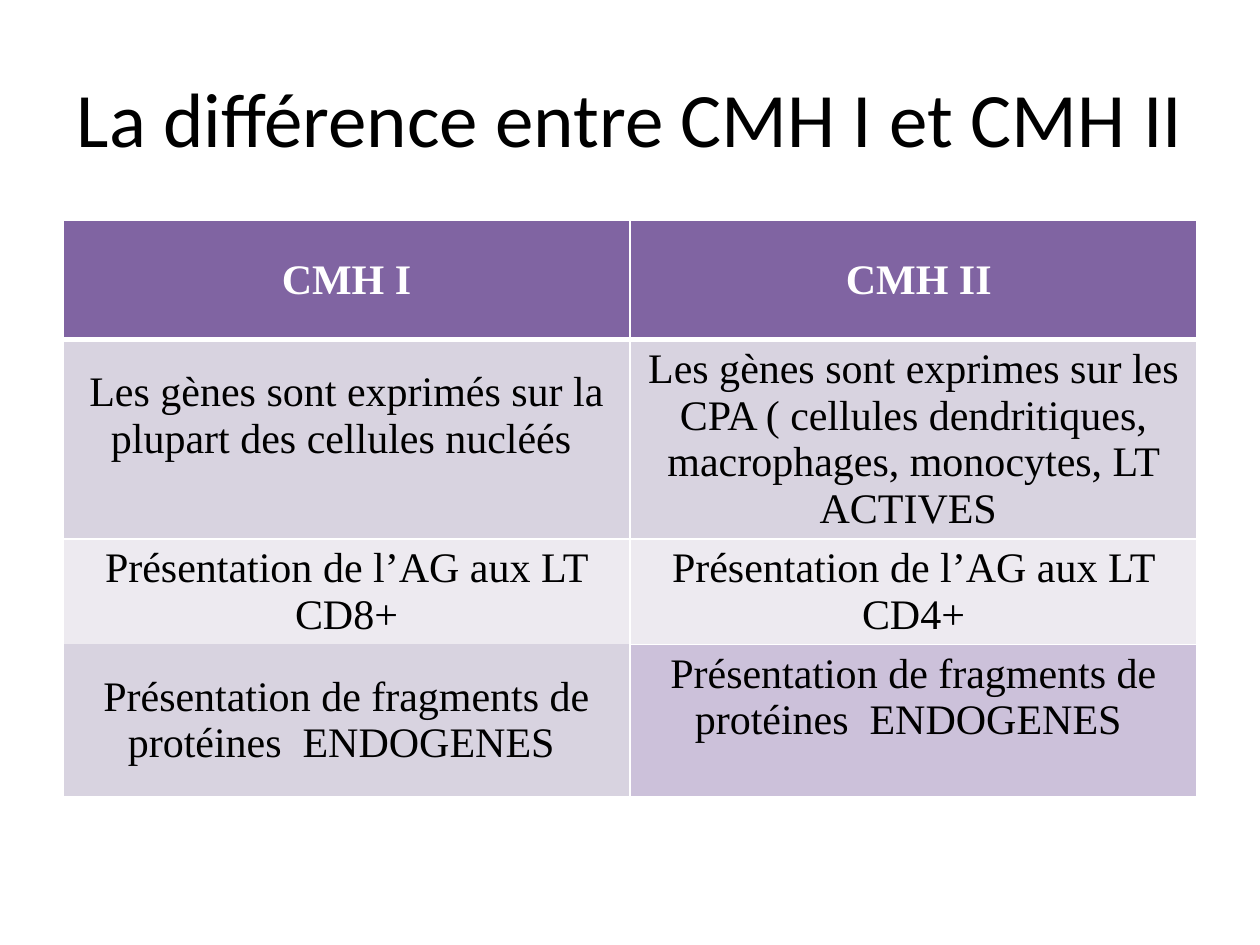
from dataclasses import dataclass

import lxml.etree
import pptx
import pptx.dml.color
import pptx.enum.text
import pptx.oxml.ns
import pptx.util

Pt = pptx.util.Pt
CENTER = pptx.enum.text.PP_ALIGN.CENTER
MIDDLE = pptx.enum.text.MSO_ANCHOR.MIDDLE


@dataclass(frozen=True)
class Theme:
    title_font: str = "Calibri"
    table_font: str = "Times New Roman"
    title_size: float = 44
    table_size: float = 24
    ink: str = "000000"
    white: str = "FFFFFF"
    header: str = "8064A2"
    band_dark: str = "D8D3E0"
    band_light: str = "EDEAF0"
    accent: str = "CCC1DA"
    rule: float = 1
    header_rule: float = 3


THEME = Theme()
MARGIN, WIDTH = 36, 648
LIFT = 30.2  # bottom inset that leaves one text line free below the wording
ROW_HEIGHTS = [68, 114, 60, 0, 86.4]

HEADER = {"fill": THEME.header, "color": THEME.white, "bold": True}
# (row, column, text, format); rows 2-3 and 3-4 are joined in opposite columns
CELLS = [
    (0, 0, "CMH I", HEADER),
    (0, 1, " CMH II", HEADER),
    (1, 0, "Les gènes sont exprimés sur la plupart des cellules nucléés ",
     {"fill": THEME.band_dark, "bottom": LIFT}),
    (1, 1, "Les gènes sont exprimes sur les CPA ( cellules dendritiques, "
           "macrophages, monocytes, LT ACTIVES ", {"fill": THEME.band_dark}),
    (2, 0, "Présentation de l’AG aux LT CD8+", {"fill": THEME.band_light}),
    (2, 1, "Présentation de l’AG aux LT CD4+", {"fill": THEME.band_light}),
    (3, 0, "Présentation de fragments de protéines  ENDOGENES ",
     {"fill": THEME.band_dark}),
    (4, 1, "Présentation de fragments de protéines  ENDOGENES ",
     {"fill": THEME.accent, "bottom": LIFT}),
]
MERGES = [((2, 1), (3, 1)), ((3, 0), (4, 0))]


class SlideBuilder:
    def __init__(self, slide, theme):
        self.slide = slide
        self.theme = theme

    def set_text(self, frame, text, color, **font_format):
        frame.word_wrap = True
        paragraph = frame.paragraphs[0]
        paragraph.alignment = CENTER
        run = paragraph.add_run()
        run.text = text
        for attribute, value in font_format.items():
            setattr(run.font, attribute, value)
        run.font.color.rgb = pptx.dml.color.RGBColor.from_string(color)

    def title(self, text, left, top, width, height):
        heading = self.slide.shapes.title
        place = {"left": left, "top": top, "width": width, "height": height}
        for attribute, value in place.items():
            setattr(heading, attribute, Pt(value))
        heading.text_frame.vertical_anchor = MIDDLE
        self.set_text(heading.text_frame, text, self.theme.ink,
                      name=self.theme.title_font, size=Pt(self.theme.title_size))

    def borders(self, cell, bottom, top):
        """Draw the white rules; they must precede the fill in the cell's XML."""
        qn = pptx.oxml.ns.qn
        properties = cell._tc.get_or_add_tcPr()
        rule = self.theme.rule
        for side, weight in {"L": rule, "R": rule, "T": top, "B": bottom}.items():
            line = lxml.etree.SubElement(properties, qn(f"a:ln{side}"), w=str(Pt(weight)))
            fill = lxml.etree.SubElement(line, qn("a:solidFill"))
            lxml.etree.SubElement(fill, qn("a:srgbClr"), val=self.theme.white)

    def cell(self, cell, text, fill, color=None, bold=False, bottom=3.6):
        cell.fill.solid()
        cell.fill.fore_color.rgb = pptx.dml.color.RGBColor.from_string(fill)
        cell.vertical_anchor = MIDDLE
        cell.margin_bottom = Pt(bottom)
        self.set_text(cell.text_frame, text, color or self.theme.ink, bold=bold,
                      name=self.theme.table_font, size=Pt(self.theme.table_size))

    def table(self, cells, merges, row_heights, left, top, width):
        frame = self.slide.shapes.add_table(
            len(row_heights), 2, Pt(left), Pt(top), Pt(width), Pt(sum(row_heights)))
        grid = frame.table
        for row, height in zip(grid.rows, row_heights):
            row.height = Pt(height)
        thin, thick = self.theme.rule, self.theme.header_rule
        for index, row in enumerate(grid.rows):
            for cell in row.cells:
                self.borders(cell, bottom=thick if index == 0 else thin,
                             top=thick if index == 1 else thin)
        for first, last in merges:
            grid.cell(*first).merge(grid.cell(*last))
        for row, column, text, cell_format in cells:
            self.cell(grid.cell(row, column), text, **cell_format)


def main():
    deck = pptx.Presentation()
    deck.slide_width, deck.slide_height = Pt(720), Pt(540)
    builder = SlideBuilder(deck.slides.add_slide(deck.slide_layouts[5]), THEME)
    builder.title("La différence entre CMH I et CMH II", MARGIN, 21.6, WIDTH, 90)
    builder.table(CELLS, MERGES, ROW_HEIGHTS, MARGIN, 126, WIDTH)
    deck.save("out.pptx")


if __name__ == "__main__":
    main()
